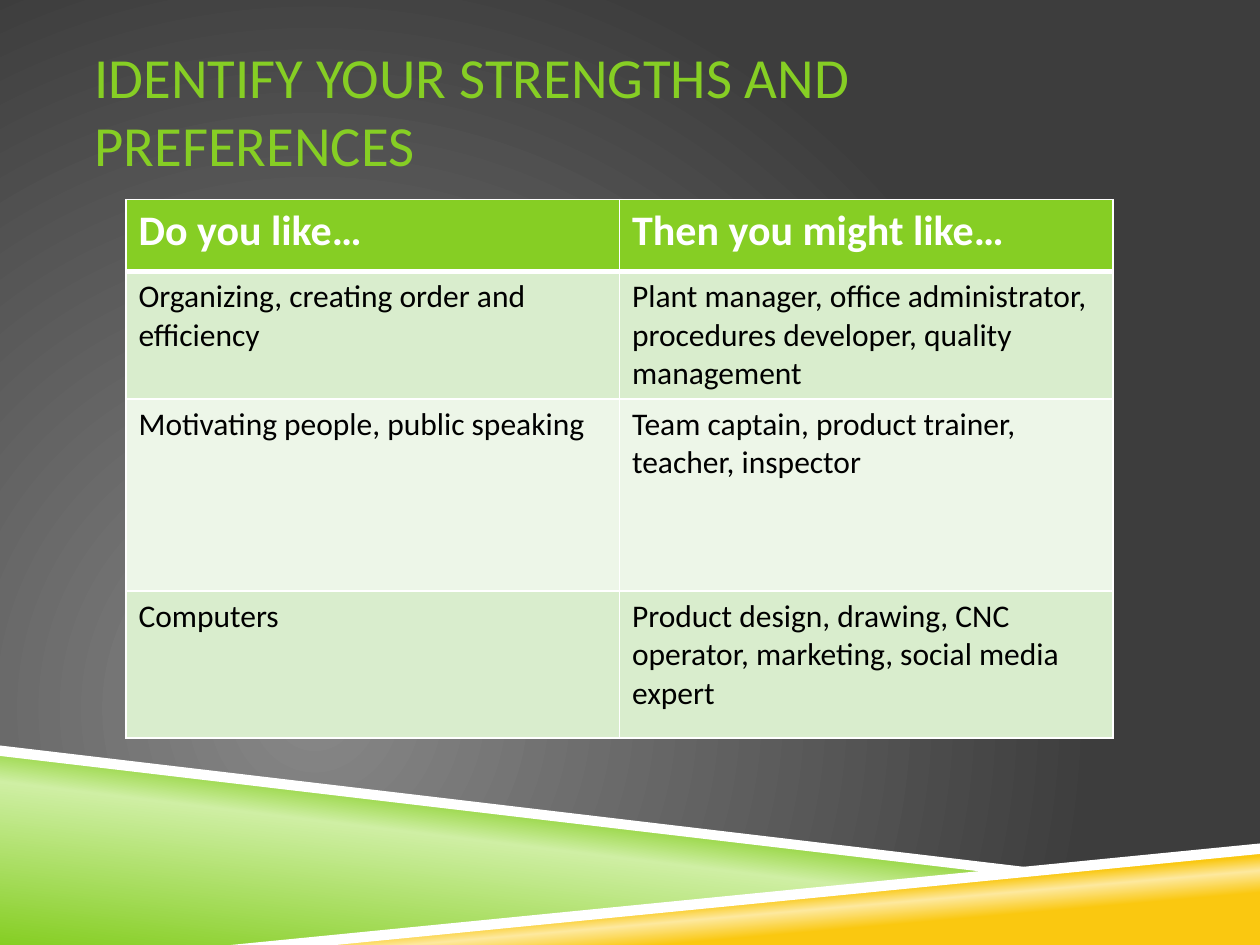
"""Build a slide that matches personal strengths with possible careers."""
from lxml import etree
from pptx import Presentation
from pptx.dml.color import RGBColor
from pptx.enum.text import MSO_ANCHOR, MSO_AUTO_SIZE, PP_ALIGN
from pptx.oxml.ns import qn
from pptx.util import Pt

LEFT = PP_ALIGN.LEFT
MIDDLE = MSO_ANCHOR.MIDDLE
NO_AUTOFIT = MSO_AUTO_SIZE.NONE

GREEN = RGBColor(0x86, 0xCE, 0x24)
PALE_GREEN = RGBColor(0xCF, 0xEF, 0xA4)
YELLOW = RGBColor(0xFA, 0xC8, 0x10)
PALE_YELLOW = RGBColor(0xFD, 0xE9, 0x9F)
GRAY = RGBColor(0x87, 0x87, 0x87)
DARK_GRAY = RGBColor(0x3D, 0x3D, 0x3D)
BAND_DARK = RGBColor(0xD9, 0xED, 0xCD)
BAND_LIGHT = RGBColor(0xED, 0xF6, 0xE8)
WHITE = RGBColor(0xFF, 0xFF, 0xFF)
BLACK = RGBColor(0x00, 0x00, 0x00)

FONT = "Calibri"
ROW_HEIGHTS = (41, 72, 109.5, 84)
COLUMN_WIDTH = 282
ROWS = (
    ("Do you like…", "Then you might like…"),
    ("Organizing, creating order and efficiency",
     "Plant manager, office administrator, procedures developer, quality management"),
    ("Motivating people, public speaking",
     "Team captain, product trainer, teacher, inspector"),
    ("Computers",
     "Product design, drawing, CNC operator, marketing, social media expert"),
)
GREEN_STOPS = ((0, GREEN), (52, PALE_GREEN), (66, GREEN))
YELLOW_STOPS = ((28, YELLOW), (40, PALE_YELLOW), (48, YELLOW))


def write_text(text_frame, text, size, color, bold=False):
    """Write one left-aligned paragraph with the given format."""
    paragraph = text_frame.paragraphs[0]
    paragraph.alignment = LEFT
    run = paragraph.add_run()
    run.text = text
    run.font.name = FONT
    run.font.size = Pt(size)
    run.font.bold = bold
    run.font.color.rgb = color


def set_gradient(fill, element, stops, angle=None):
    """Give a fill a linear gradient, or a circular one when no angle is given."""
    fill.gradient()
    gradient = next(element.iter(qn("a:gradFill")))
    for child in list(gradient):
        gradient.remove(child)
    stop_list = etree.SubElement(gradient, qn("a:gsLst"))
    for position, color in stops:
        stop = etree.SubElement(stop_list, qn("a:gs"), pos=str(position * 1000))
        etree.SubElement(stop, qn("a:srgbClr"), val=str(color))
    if angle is None:
        circle = etree.SubElement(gradient, qn("a:path"))
        circle.set("path", "circle")
        etree.SubElement(circle, qn("a:fillToRect"),
                         l="50000", t="100000", r="100000", b="50000")
    else:
        etree.SubElement(gradient, qn("a:lin"), ang=str(angle * 60000), scaled="0")


def add_polygon(slide, points, color=None, stops=None, angle=None):
    """Add a closed outline with a solid or gradient fill."""
    builder = slide.shapes.build_freeform(*points[0], scale=Pt(1))
    builder.add_line_segments(points[1:], close=True)
    shape = builder.convert_to_shape()
    shape.shadow.inherit = False
    shape.line.fill.background()
    if stops:
        set_gradient(shape.fill, shape.element, stops, angle)
    else:
        shape.fill.solid()
        shape.fill.fore_color.rgb = color


def set_borders(cell, top, bottom):
    """Draw white borders around a cell."""
    properties = cell._tc.get_or_add_tcPr()
    widths = {"a:lnL": 1, "a:lnR": 1, "a:lnT": top, "a:lnB": bottom}
    for index, (tag, width) in enumerate(widths.items()):
        line = etree.Element(qn(tag), w=str(Pt(width)))
        fill = etree.SubElement(line, qn("a:solidFill"))
        etree.SubElement(fill, qn("a:srgbClr"), val=str(WHITE))
        properties.insert(index, line)


def add_title(slide, text):
    """Place and format the title placeholder."""
    title = slide.shapes.title
    title.left, title.top, title.width, title.height = Pt(54), Pt(18), Pt(612), Pt(90)
    frame = title.text_frame
    frame.word_wrap = True
    frame.auto_size = NO_AUTOFIT
    frame.vertical_anchor = MIDDLE
    frame.margin_left = frame.margin_right = 0
    frame.margin_top = frame.margin_bottom = Pt(3.6)
    write_text(frame, text, size=32.4, color=GREEN)


def add_career_table(slide):
    """Add the table of preferences and careers."""
    table = slide.shapes.add_table(
        len(ROWS), 2, Pt(72), Pt(114), Pt(2 * COLUMN_WIDTH), Pt(sum(ROW_HEIGHTS))).table
    table.first_row = table.horz_banding = False
    for column in table.columns:
        column.width = Pt(COLUMN_WIDTH)
    for row_index, (texts, height) in enumerate(zip(ROWS, ROW_HEIGHTS)):
        header = row_index == 0
        band = BAND_DARK if row_index % 2 else BAND_LIGHT
        table.rows[row_index].height = Pt(height)
        for cell, text in zip(table.rows[row_index].cells, texts):
            cell.fill.solid()
            cell.fill.fore_color.rgb = GREEN if header else band
            set_borders(cell, top=3 if row_index == 1 else 1, bottom=3 if header else 1)
            write_text(cell.text_frame, text, size=24 if header else 18,
                       color=WHITE if header else BLACK, bold=header)


def main():
    """Build and save the presentation."""
    presentation = Presentation()
    presentation.slide_width, presentation.slide_height = Pt(720), Pt(540)
    slide = presentation.slides.add_slide(presentation.slide_layouts[5])
    set_gradient(slide.background.fill, slide.element, ((0, GRAY), (100, DARK_GRAY)))
    add_polygon(slide, ((0, 430), (570, 498), (144, 540), (0, 540)),
                stops=GREEN_STOPS, angle=277)
    add_polygon(slide, ((142.5, 540), (720, 484), (720, 540)),
                stops=YELLOW_STOPS, angle=265)
    add_polygon(slide, ((0, 426), (0, 432), (569, 499), (599, 497)), color=WHITE)
    add_polygon(slide, ((720, 481.5), (132.5, 540), (191.5, 540), (720, 487.5)), color=WHITE)
    add_title(slide, "IDENTIFY YOUR STRENGTHS AND PREFERENCES")
    add_career_table(slide)
    presentation.save("out.pptx")


if __name__ == "__main__":
    main()
